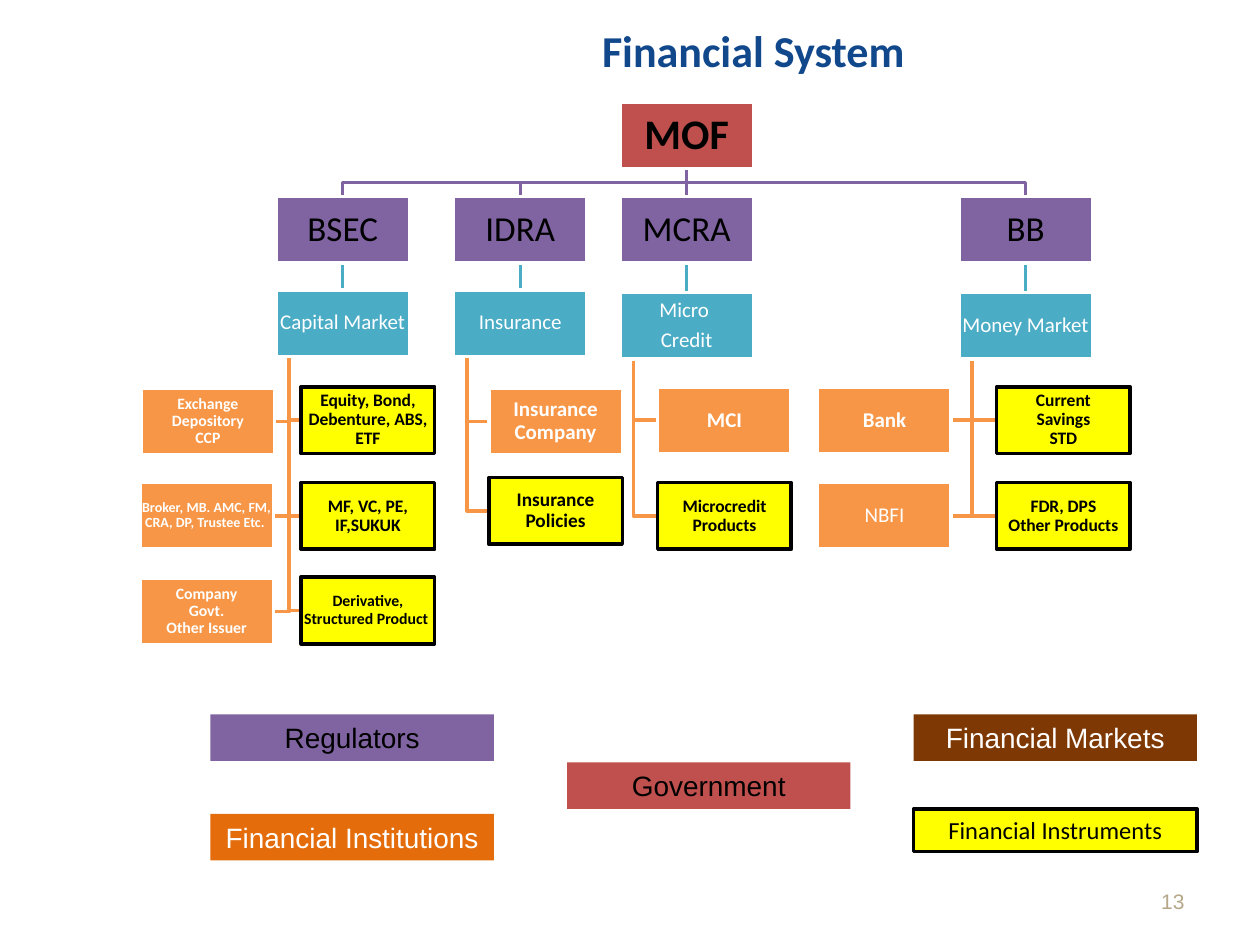
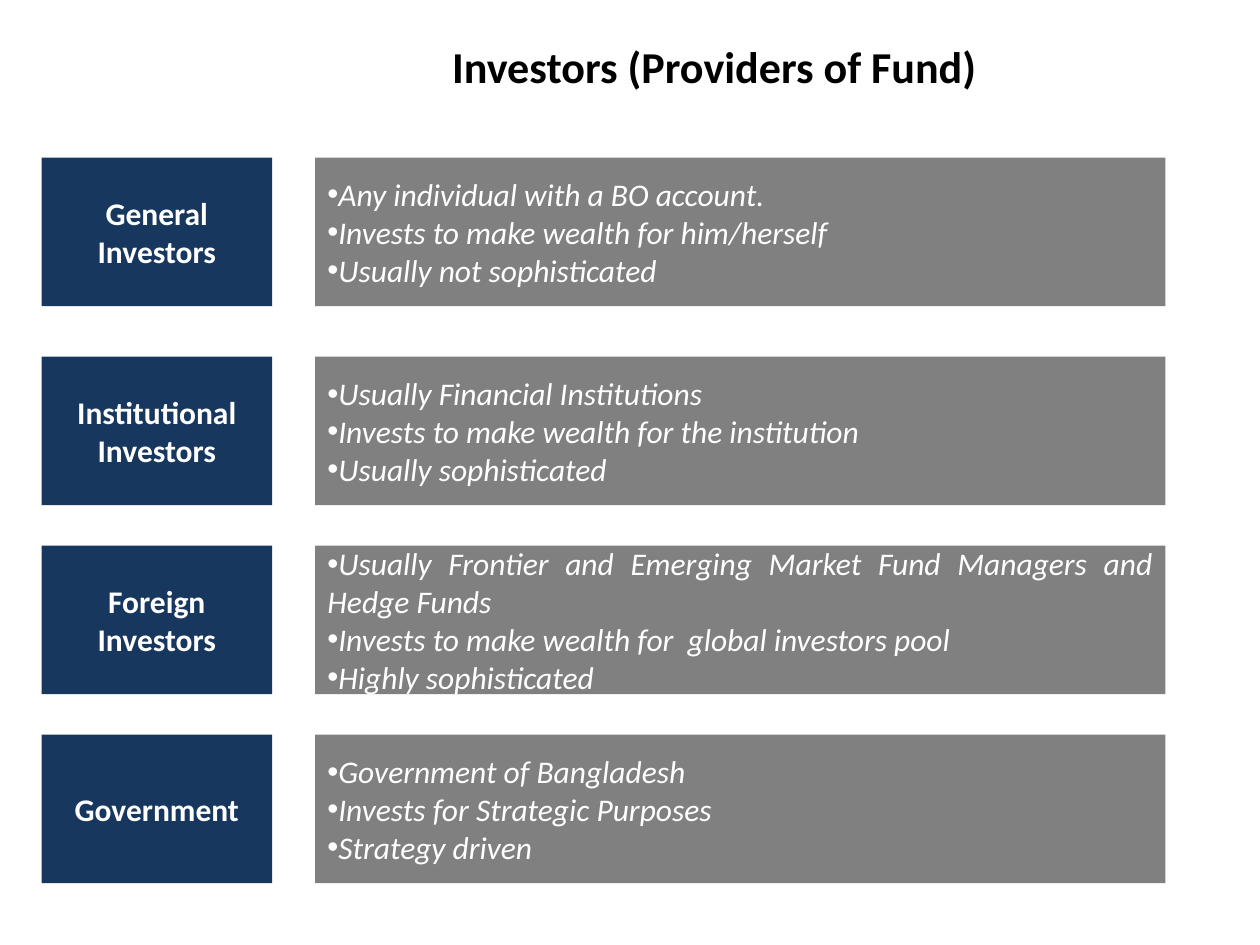
from dataclasses import dataclass

from lxml import etree
from pptx import Presentation
from pptx.dml.color import RGBColor
from pptx.enum.shapes import MSO_CONNECTOR, MSO_SHAPE
from pptx.enum.text import MSO_ANCHOR, PP_ALIGN
from pptx.oxml.ns import qn
from pptx.util import Inches, Pt

CENTER, RIGHT, JUSTIFY = PP_ALIGN.CENTER, PP_ALIGN.RIGHT, PP_ALIGN.JUSTIFY
TOP, MIDDLE = MSO_ANCHOR.TOP, MSO_ANCHOR.MIDDLE
RECTANGLE, STRAIGHT = MSO_SHAPE.RECTANGLE, MSO_CONNECTOR.STRAIGHT

# The page is a grid of 100 columns by 75 rows
COLUMNS, ROWS = 100, 75
CELL = Inches(0.1)


@dataclass(frozen=True)
class Theme:
    heading_font: str = "Calibri"
    label_font: str = "Arial"
    white: str = "FFFFFF"
    black: str = "000000"
    title_blue: str = "11478B"
    page_number: str = "B5A788"
    government: str = "C0504D"
    regulator: str = "8064A2"
    market: str = "4BACC6"
    institution: str = "F79646"
    instrument: str = "FFFF00"
    market_key: str = "7E3804"
    institution_key: str = "E46C0A"
    navy: str = "17375E"
    grey: str = "808080"
    title_size: float = 25.2
    root_size: float = 24
    regulator_size: float = 20
    body_size: float = 18
    key_size: float = 16
    small_key_size: float = 14
    node_size: float = 12
    line_width: float = 2


THEME = Theme()


class Page:
    """The style and the current slide; lengths are columns and rows."""

    def __init__(self, deck, theme):
        self.deck = deck
        self.theme = theme
        self.slide = None

    def start(self):
        self.slide = self.deck.slides.add_slide(self.deck.slide_layouts[6])

    def set_text(self, shape, text, size, color, font=None, bold=False,
                 italic=False, align=CENTER, anchor=MIDDLE, inset=None,
                 spacing=None, after=0, bullet=False):
        frame = shape.text_frame
        frame.text = text
        frame.word_wrap = True
        frame.vertical_anchor = anchor
        if inset is not None:
            frame.margin_left = frame.margin_right = Inches(inset)
            frame.margin_top = frame.margin_bottom = Inches(inset)
        for para in frame.paragraphs:
            para.alignment = align
            para.line_spacing = spacing
            para.space_after = Pt(after)
            if bullet:
                properties = para._p.get_or_add_pPr()
                etree.SubElement(properties, qn("a:buFont"), typeface="Arial")
                etree.SubElement(properties, qn("a:buChar"), char="•")
            for span in para.runs:
                span.font.name = font or self.theme.heading_font
                span.font.size = Pt(size)
                span.font.bold = bold
                span.font.italic = italic
                span.font.color.rgb = RGBColor.from_string(color)

    def label(self, place, text, size, color, **style):
        box = self.slide.shapes.add_textbox(*(int(n * CELL) for n in place))
        self.set_text(box, text, size, color, **style)

    def title(self, col, row, text, color):
        self.label((col, row, 82, 4.5), text, self.theme.title_size, color,
                   bold=True)

    def block(self, place, text, fill, size, color, border=None, **style):
        box = self.slide.shapes.add_shape(
            RECTANGLE, *(int(n * CELL) for n in place))
        box.shadow.inherit = False
        box.fill.solid()
        box.fill.fore_color.rgb = RGBColor.from_string(fill)
        if border:
            self.stroke(box, border)
        else:
            box.line.fill.background()
        self.set_text(box, text, size, color, **style)

    def stroke(self, shape, color):
        shape.line.color.rgb = RGBColor.from_string(color)
        shape.line.width = Pt(self.theme.line_width)

    def line(self, points, color):
        """Draw a straight line through two points, or a bent one."""
        points = [(int(x * CELL), int(y * CELL)) for x, y in points]
        if len(points) == 2:
            line = self.slide.shapes.add_connector(
                STRAIGHT, *points[0], *points[1])
            etree.SubElement(line._element.spPr, qn("a:effectLst"))
        else:
            builder = self.slide.shapes.build_freeform(*points[0])
            builder.add_line_segments(points[1:], close=False)
            line = builder.convert_to_shape()
            line.shadow.inherit = False
            line.fill.background()
        self.stroke(line, color)


# Organisation chart
NODE_WIDTH, NODE_HEIGHT = 10.6, 5.3
ROOT_COL, ROOT_ROW, REGULATOR_ROW = 49.2, 8.1, 15.6

# Tier: fill, border, text colour
TIERS = {
    "government": (THEME.government, THEME.white, THEME.black),
    "regulator": (THEME.regulator, THEME.white, THEME.black),
    "market": (THEME.market, THEME.white, THEME.white),
    "institution": (THEME.institution, THEME.white, THEME.white),
    "instrument": (THEME.instrument, THEME.black, THEME.black),
}


@dataclass(frozen=True)
class Leaf:
    tier: str
    text: str
    col: float
    row: float
    size: float
    bold: bool = True


@dataclass(frozen=True)
class Branch:
    regulator: str
    market: str
    col: float
    market_row: float
    leaves: tuple


BRANCHES = (
    Branch("BSEC", "Capital Market", 21.9, 23, (
        Leaf("instrument", "Equity, Bond, Debenture, ABS, ETF", 23.9, 30.7, 10),
        Leaf("instrument", "MF, VC, PE, IF,SUKUK", 23.9, 38.3, 10),
        Leaf("instrument", "Derivative, Structured Product ", 23.9, 45.8, 9),
        Leaf("institution", "Exchange\nDepository\nCCP", 11.2, 30.8, 9),
        Leaf("institution", "Broker, MB. AMC, FM, CRA, DP, Trustee Etc. ",
             11.1, 38.3, 8),
        Leaf("institution", "Company\nGovt.\nOther Issuer", 11.1, 45.9, 9))),
    Branch("IDRA", "Insurance", 36, 23, (
        Leaf("instrument", "Insurance Policies", 38.8, 37.9, 11),
        Leaf("institution", "Insurance Company", 38.8, 30.8, 12))),
    Branch("MCRA", "Micro \nCredit", ROOT_COL, 23.2, (
        Leaf("institution", "MCI", 52.2, 30.7, 12),
        Leaf("instrument", "Microcredit Products", 52.2, 38.3, 10))),
    Branch("BB", "Money Market", 76.1, 23.2, (
        Leaf("instrument", "Current\nSavings\nSTD", 79.1, 30.7, 10),
        Leaf("instrument", "FDR, DPS\nOther Products", 79.1, 38.3, 10),
        Leaf("institution", "Bank", 64.9, 30.7, 12),
        Leaf("institution", "NBFI", 64.9, 38.3, 12, bold=False))),
)


def draw_links(page, branch):
    theme = page.theme
    center = branch.col + NODE_WIDTH / 2
    root_center = ROOT_COL + NODE_WIDTH / 2
    root_bottom = ROOT_ROW + NODE_HEIGHT
    bus = (root_bottom + REGULATOR_ROW) / 2

    # Leaves hang from a stem at a tenth of the market's width
    stem = branch.col + NODE_WIDTH / 10
    for leaf in branch.leaves:
        edge = leaf.col if leaf.col > stem else leaf.col + NODE_WIDTH
        middle = leaf.row + NODE_HEIGHT / 2
        page.line([(stem, branch.market_row + NODE_HEIGHT),
                   (stem, middle), (edge, middle)], theme.institution)

    page.line([(center, REGULATOR_ROW + NODE_HEIGHT),
               (center, branch.market_row)], theme.market)
    route = [(root_center, root_bottom), (center, REGULATOR_ROW)]
    if center != root_center:
        route[1:1] = [(root_center, bus), (center, bus)]
    page.line(route, theme.regulator)


def draw_node(page, tier, text, col, row, size, bold=False, after=0):
    fill, border, color = TIERS[tier]
    page.block((col, row, NODE_WIDTH, NODE_HEIGHT), text, fill, size, color,
               border, bold=bold, inset=0.01, spacing=0.9, after=after)


def draw_financial_system(page):
    theme = page.theme
    page.start()
    page.title(18.8, 1.7, "Financial System", theme.title_blue)
    page.label((71.7, 69.5, 23.3, 4), "13", 12, theme.page_number,
               font=theme.label_font, align=RIGHT)

    # Links lie behind the nodes
    for branch in BRANCHES:
        draw_links(page, branch)
    draw_node(page, "government", "MOF", ROOT_COL, ROOT_ROW,
              theme.root_size, bold=True)
    for branch in BRANCHES:
        draw_node(page, "regulator", branch.regulator, branch.col,
                  REGULATOR_ROW, theme.regulator_size)
        draw_node(page, "market", branch.market, branch.col,
                  branch.market_row, theme.node_size, after=4.2)
        for leaf in branch.leaves:
            draw_node(page, leaf.tier, leaf.text, leaf.col, leaf.row,
                      leaf.size, leaf.bold)

    # Colour key
    for text, col, row, fill, color in (
            ("Government", 45, 60.5, theme.government, theme.black),
            ("Regulators", 16.7, 56.7, theme.regulator, theme.black),
            ("Financial Markets", 72.5, 56.7, theme.market_key, theme.white),
            ("Financial Institutions", 16.7, 64.6, theme.institution_key,
             theme.white)):
        page.block((col, row, 22.5, 3.7), text, fill, theme.key_size, color,
                   font=theme.label_font, anchor=TOP)
    page.block((72.5, 64.2, 22.5, 3.4), "Financial Instruments",
               theme.instrument, theme.small_key_size, theme.black,
               theme.black, anchor=TOP)


# Investor groups: top row, name, points
INVESTORS = (
    (12.5, "General Investors",
     "Any individual with a BO account. \n"
     "Invests to make wealth for him/herself\n"
     "Usually not sophisticated"),
    (28.3, "Institutional Investors",
     "Usually Financial Institutions\n"
     "Invests to make wealth for the institution\n"
     "Usually sophisticated"),
    (43.3, "Foreign Investors",
     "Usually Frontier and Emerging Market Fund Managers and Hedge Funds\n"
     "Invests to make wealth for  global investors pool\n"
     "Highly sophisticated"),
    (58.3, "Government",
     "Government of Bangladesh\n"
     "Invests for Strategic Purposes\n"
     "Strategy driven"),
)


def draw_investors(page):
    theme = page.theme
    page.start()
    page.title(15.7, 3, "Investors (Providers of Fund)", theme.black)
    for row, name, points in INVESTORS:
        page.block((3.3, row, 18.3, 11.8), name, theme.navy,
                   theme.body_size, theme.white, bold=True)
        page.block((25, row, 67.5, 11.8), points, theme.grey,
                   theme.body_size, theme.white, italic=True,
                   align=JUSTIFY, bullet=True)


def main():
    deck = Presentation()
    deck.slide_width = COLUMNS * CELL
    deck.slide_height = ROWS * CELL
    page = Page(deck, THEME)
    draw_financial_system(page)
    draw_investors(page)
    deck.save("out.pptx")


if __name__ == "__main__":
    main()
